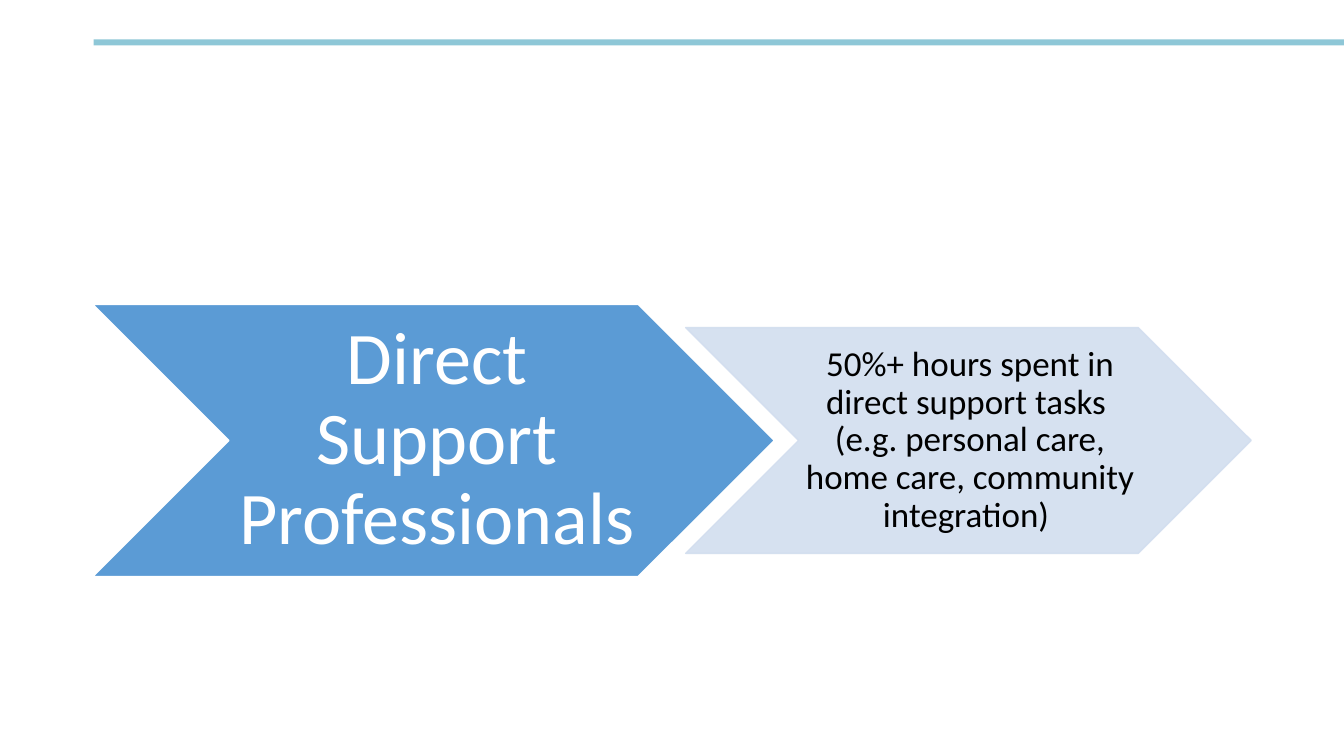
"""Build a slide with two chevrons defining direct support professionals."""
import lxml.etree
import pptx
import pptx.dml.color
import pptx.enum.shapes
import pptx.enum.text
import pptx.oxml.ns
import pptx.util

Inches = pptx.util.Inches
Pt = pptx.util.Pt
Shapes = pptx.enum.shapes.MSO_SHAPE


def color(value):
    return pptx.dml.color.RGBColor.from_string(value)


class SlideBuilder:
    font = "Calibri"
    line_spacing = 0.9

    def __init__(self, page):
        self.page = page

    def shape(self, kind, left, top, width, height, fill):
        shape = self.page.shapes.add_shape(
            kind, Inches(left), Inches(top), Inches(width), Inches(height))
        shape.shadow.inherit = False
        shape.fill.solid()
        shape.fill.fore_color.rgb = color(fill)
        return shape

    def bar(self, left, top, width, height, fill):
        self.shape(Shapes.RECTANGLE, left, top, width, height, fill).line.fill.background()

    def chevron(self, left, top, width, height, fill, line, text, size, ink, inset, opacity=100):
        chevron = self.shape(Shapes.CHEVRON, left, top, width, height, fill)
        chevron.line.color.rgb = color(line)
        chevron.line.width = Pt(1)
        if opacity < 100:
            for tint in chevron.element.spPr.iter(pptx.oxml.ns.qn("a:srgbClr")):
                alpha = lxml.etree.SubElement(tint, pptx.oxml.ns.qn("a:alpha"))
                alpha.set("val", str(opacity * 1000))
        frame = chevron.text_frame
        frame.word_wrap = True
        frame.vertical_anchor = pptx.enum.text.MSO_ANCHOR.MIDDLE
        frame.margin_left = Inches(inset)
        frame.margin_right = 0
        frame.margin_top = frame.margin_bottom = Inches(inset / 2)
        para = frame.paragraphs[0]
        para.text = text
        para.alignment = pptx.enum.text.PP_ALIGN.CENTER
        para.line_spacing = self.line_spacing
        para.font.name = self.font
        para.font.size = Pt(size)
        para.font.color.rgb = color(ink)


def main():
    deck = pptx.Presentation()
    deck.slide_width = Inches(13.33)
    deck.slide_height = Inches(7.5)
    builder = SlideBuilder(deck.slides.add_slide(deck.slide_layouts[6]))
    builder.bar(0.93, 0.39, 12.4, 0.06, "8EC7D7")
    builder.chevron(0.92, 3.02, 6.76, 2.7, "5B9BD5", "FFFFFF",
                    "Direct Support Professionals", 53, "FFFFFF", 0.07)
    builder.chevron(6.8, 3.25, 5.61, 2.24, "D2DEEF", "D2DEEF",
                    "50%+ hours spent in direct support tasks  (e.g. personal care, "
                    "home care, community integration) ", 25, "000000", 0.03, opacity=90)
    deck.save("out.pptx")


if __name__ == "__main__":
    main()
